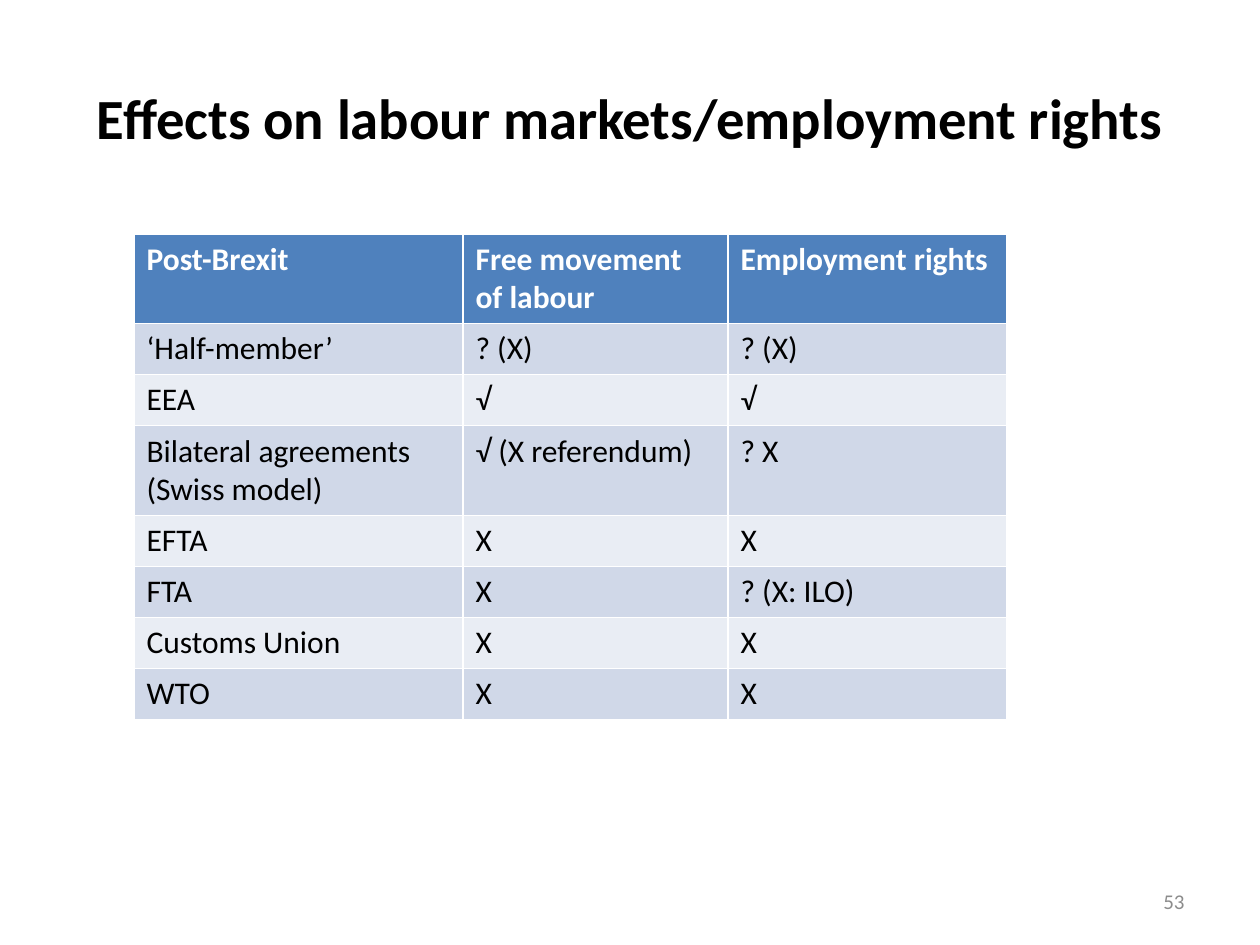
from dataclasses import dataclass

from pptx import Presentation
from pptx.dml.color import RGBColor
from pptx.enum.text import MSO_ANCHOR, MSO_AUTO_SIZE, PP_ALIGN
from pptx.util import Emu, Pt

TITLE = "Effects on labour markets/employment rights"
PAGE_NUMBER = "53"
HEADERS = ("Post-Brexit", "Free movement of labour", "Employment rights")
MODELS = (
    ("‘Half-member’", "? (X)", "? (X)"),
    ("EEA", "√", "√"),
    ("Bilateral agreements (Swiss model)", "√ (X referendum)", "? X"),
    ("EFTA", "X", "X"),
    ("FTA", "X", "? (X: ILO)"),
    ("Customs Union", "X", "X"),
    ("WTO", "X", "X"),
)

SLIDE_SIZE = (1260, 945)
TITLE_BOX = (63, 38, 1134, 157)
NUMBER_BOX = (903, 876, 294, 50)
TABLE_ORIGIN = (134, 234)
COLUMN_WIDTHS = (329, 265, 279)
ROW_HEIGHT = 51


@dataclass(frozen=True)
class Theme:
    font: str = "Calibri"
    text: str = "000000"
    header_text: str = "FFFFFF"
    header_fill: str = "4F81BD"
    bands: tuple = ("D0D8E8", "E9EDF4")
    number_text: str = "8C8C8C"
    title_size: float = 32.4
    table_size: float = 18
    number_size: float = 12


THEME = Theme()


def px(length):
    return Emu(round(length * 914400 / 126))


def write_text(frame, text, *, size, color=THEME.text, bold=False,
               align=PP_ALIGN.LEFT, anchor=MSO_ANCHOR.MIDDLE):
    frame.word_wrap = True
    frame.auto_size = MSO_AUTO_SIZE.NONE
    frame.vertical_anchor = anchor
    paragraph = frame.paragraphs[0]
    paragraph.alignment = align
    run = paragraph.add_run()
    run.text = text
    run.font.name = THEME.font
    run.font.size = Pt(size)
    run.font.bold = bold
    run.font.color.rgb = RGBColor.from_string(color)


def add_title(slide):
    title = slide.shapes.title
    title.left, title.top, title.width, title.height = map(px, TITLE_BOX)
    write_text(title.text_frame, TITLE, size=THEME.title_size, bold=True,
               align=PP_ALIGN.CENTER)


def add_effects_table(slide):
    rows = (HEADERS, *MODELS)
    size = (sum(COLUMN_WIDTHS), ROW_HEIGHT * len(rows))
    table = slide.shapes.add_table(
        len(rows), len(HEADERS), *map(px, TABLE_ORIGIN + size)).table
    for column, width in zip(table.columns, COLUMN_WIDTHS):
        column.width = px(width)
    for row_index, values in enumerate(rows):
        is_header = row_index == 0
        fill = THEME.header_fill if is_header else THEME.bands[(row_index - 1) % 2]
        color = THEME.header_text if is_header else THEME.text
        for column_index, value in enumerate(values):
            cell = table.cell(row_index, column_index)
            cell.fill.solid()
            cell.fill.fore_color.rgb = RGBColor.from_string(fill)
            write_text(cell.text_frame, value, size=THEME.table_size, color=color,
                       bold=is_header, anchor=MSO_ANCHOR.TOP)


def add_page_number(slide):
    box = slide.shapes.add_textbox(*map(px, NUMBER_BOX))
    write_text(box.text_frame, PAGE_NUMBER, size=THEME.number_size,
               color=THEME.number_text, align=PP_ALIGN.RIGHT)


def main():
    presentation = Presentation()
    presentation.slide_width, presentation.slide_height = map(px, SLIDE_SIZE)
    slide = presentation.slides.add_slide(presentation.slide_layouts[5])
    add_title(slide)
    add_effects_table(slide)
    add_page_number(slide)
    presentation.save("out.pptx")


if __name__ == "__main__":
    main()
